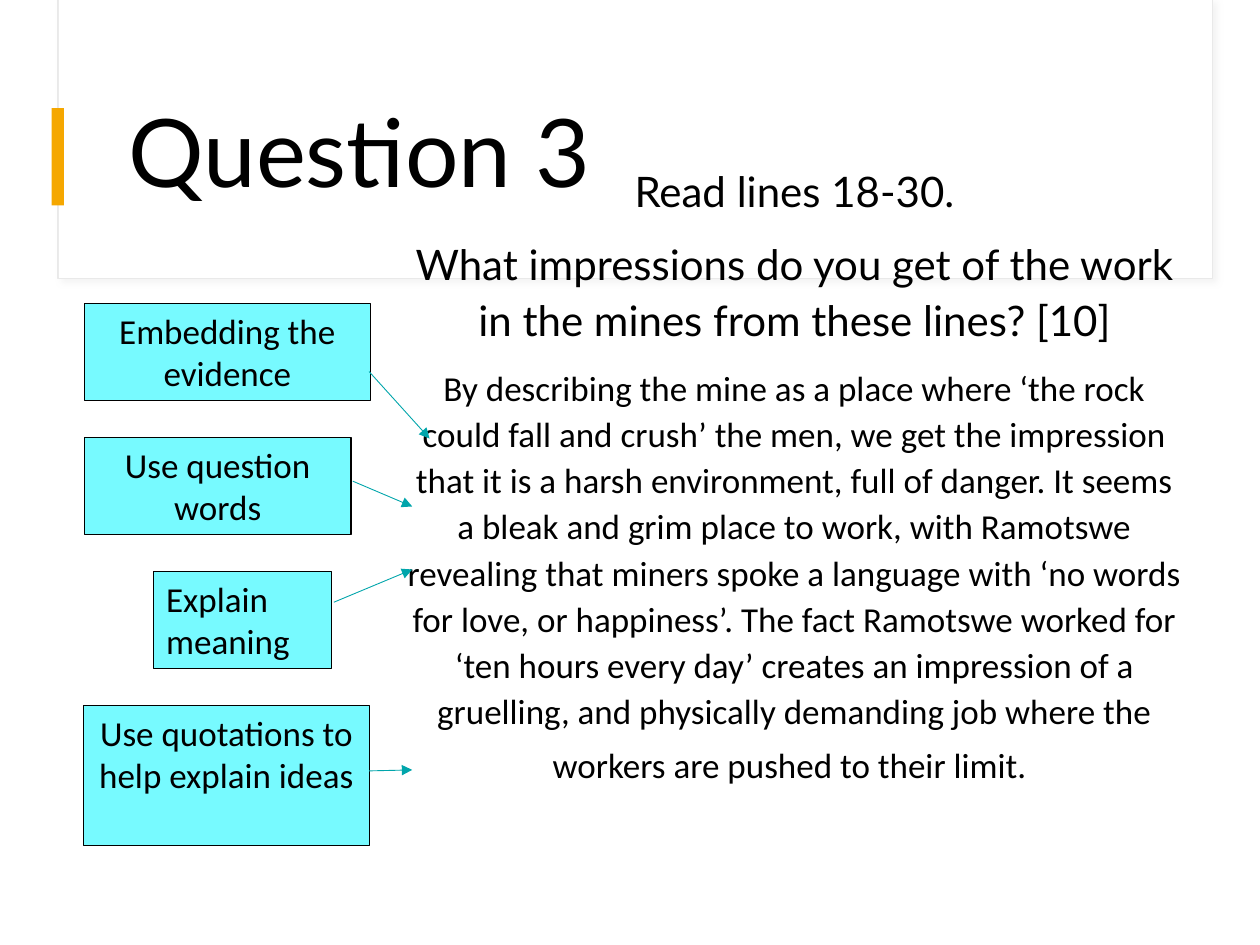
import pptx
import pptx.util
import pptx.dml.color
import pptx.enum.shapes
import pptx.enum.text
import pptx.oxml
import pptx.oxml.ns
from pptx.util import Cm, Pt

RGBColor = pptx.dml.color.RGBColor
WHITE = RGBColor(0xFF, 0xFF, 0xFF)
BLACK = RGBColor(0, 0, 0)
FRAME_GREY = RGBColor(0xE9, 0xE9, 0xE9)
AMBER = RGBColor(0xF5, 0xA7, 0x00)
CYAN = RGBColor(0x77, 0xFA, 0xFF)
TEAL = RGBColor(0x00, 0xA5, 0xAB)

LEFT = pptx.enum.text.PP_ALIGN.LEFT
CENTER = pptx.enum.text.PP_ALIGN.CENTER
A_NS = pptx.oxml.ns.nsdecls("a")

deck = pptx.Presentation()
deck.slide_width, deck.slide_height = Cm(25.4), Cm(19.05)
slide = deck.slides.add_slide(deck.slide_layouts[6])


def add_box(left, top, width, height, fill, line=None):
    box = slide.shapes.add_shape(
        pptx.enum.shapes.MSO_SHAPE.RECTANGLE,
        Cm(left), Cm(top), Cm(width), Cm(height))
    box.shadow.inherit = False
    box.fill.solid()
    box.fill.fore_color.rgb = fill
    if line is None:
        box.line.fill.background()
    else:
        box.line.color.rgb = line
        box.line.width = Pt(0.75)
    return box


def style_run(run, font, size):
    run.font.name = font
    run.font.size = Pt(size)
    run.font.color.rgb = BLACK


# Header panel with its soft shadow, and the accent bar
header = add_box(1.17, 0, 23.27, 5.61, WHITE, FRAME_GREY)
effects = header._element.spPr.find(pptx.oxml.ns.qn("a:effectLst"))
effects.append(pptx.oxml.parse_xml(
    f'<a:outerShdw {A_NS} blurRad="{Pt(4)}" dist="{Pt(3)}" dir="2700000">'
    '<a:srgbClr val="D9D9D9"><a:alpha val="30000"/></a:srgbClr></a:outerShdw>'))
add_box(1.19, 0, 23.24, 5.59, WHITE)
add_box(1.04, 2.18, 0.25, 1.96, AMBER)

title = slide.shapes.add_textbox(Cm(2.34), Cm(1.52), Cm(21.18), Cm(3.28)).text_frame
title.word_wrap = True
title.vertical_anchor = pptx.enum.text.MSO_ANCHOR.MIDDLE
title.text = "Question 3"
title.paragraphs[0].line_spacing = 0.9
style_run(title.paragraphs[0].runs[0], "Lato", 54)

# Question and model answer
model_answer = (
    "By describing the mine as a place where ‘the rock could fall and crush’ the men, "
    "we get the impression that it is a harsh environment, full of danger. It seems a "
    "bleak and grim place to work, with Ramotswe revealing that miners spoke a language "
    "with ‘no words for love, or happiness’. The fact Ramotswe worked for ‘ten hours "
    "every day’ creates an impression of a gruelling, and physically demanding job where "
    "the workers are pushed to their limit.")
passages = [
    ("Read lines 18-30.", "Lato", 24),
    ("What impressions do you get of the work in the mines from these lines? [10]", "Lato", 24),
    (model_answer, "Calibri", 20),
]
body = slide.shapes.add_textbox(Cm(7.9), Cm(3.12), Cm(16.23), Cm(13.69)).text_frame
body.word_wrap = True
body.text = "\n".join(text for text, font, size in passages)
for paragraph, (text, font, size) in zip(body.paragraphs, passages):
    paragraph.alignment = CENTER
    paragraph.line_spacing = 1.1
    paragraph.space_before = Pt(10)
    style_run(paragraph.runs[0], font, size)
closing_space = body.paragraphs[-1].add_run()
closing_space.text = " "
style_run(closing_space, "Calibri", 24)

# Skill labels, evenly stepped, each with an arrow to the answer
FIRST_TOP, STEP = 6.12, 2.7
skills = [  # text, left, width, height, alignment, arrow start, arrow end
    ("Embedding the evidence", 1.7, 5.77, 1.96, CENTER, (7.44, 7.49), (8.66, 8.84)),
    ("Use question words", 1.7, 5.38, 1.96, CENTER, (7.11, 9.7), (8.31, 10.21)),
    ("Explain meaning", 3.1, 3.58, 1.96, LEFT, (6.73, 12.14), (8.31, 11.48)),
    ("Use quotations to help explain ideas", 1.68, 5.77, 2.82, CENTER,
     (7.44, 15.54), (8.31, 15.52)),
]
for row, (text, left, width, height, alignment, start, end) in enumerate(skills):
    label = add_box(left, FIRST_TOP + row * STEP, width, height, CYAN, BLACK).text_frame
    label.word_wrap = True
    label.vertical_anchor = pptx.enum.text.MSO_ANCHOR.TOP
    label.text = text
    label.paragraphs[0].alignment = alignment
    style_run(label.paragraphs[0].runs[0], "Calibri", 20)

    arrow = slide.shapes.add_connector(
        pptx.enum.shapes.MSO_CONNECTOR.STRAIGHT,
        Cm(start[0]), Cm(start[1]), Cm(end[0]), Cm(end[1]))
    arrow.line.color.rgb = TEAL
    arrow.line.width = Pt(0.5)
    arrow.line._get_or_add_ln().append(
        pptx.oxml.parse_xml(f'<a:tailEnd {A_NS} type="triangle"/>'))
    arrow._element.spPr.append(pptx.oxml.parse_xml(f"<a:effectLst {A_NS}/>"))

deck.save("out.pptx")
